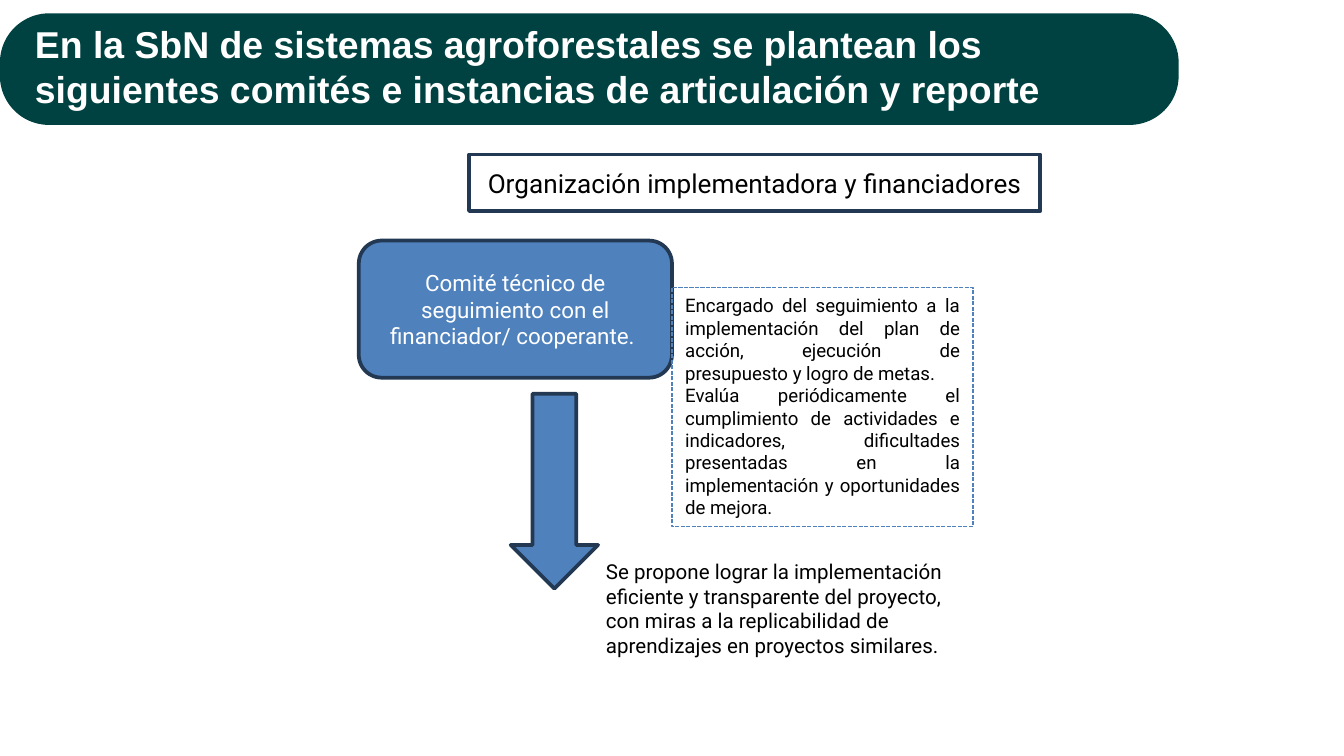
"""Build the slide on committees and reporting for agroforestry systems."""
from dataclasses import dataclass
from typing import Optional

from pptx import Presentation
from pptx.dml.color import RGBColor
from pptx.enum.dml import MSO_LINE
from pptx.enum.shapes import MSO_SHAPE
from pptx.enum.text import MSO_ANCHOR, MSO_AUTO_SIZE, PP_ALIGN
from pptx.shapes.autoshape import Shape
from pptx.slide import Slide
from pptx.util import Inches, Pt

BLUE = "4F81BD"
NAVY = "233953"
GREEN = "004241"
WHITE = "FFFFFF"
BLACK = "000000"


@dataclass
class Block:
    geometry: MSO_SHAPE
    box: tuple[float, float, float, float]
    paragraphs: tuple[str, ...] = ()
    size: float = 12
    color: str = BLACK
    align: PP_ALIGN = PP_ALIGN.CENTER
    anchor: MSO_ANCHOR = MSO_ANCHOR.MIDDLE
    fill: Optional[str] = None
    line: Optional[str] = NAVY
    weight: float = 2
    dash: Optional[MSO_LINE] = None


TITLE = (
    "En la SbN de sistemas agroforestales se plantean los siguientes "
    "comités e instancias de articulación y reporte"
)
BLOCKS = (
    Block(
        MSO_SHAPE.ROUNDED_RECTANGLE, (2.67, 1.79, 2.33, 1.02),
        ("Comité técnico de seguimiento con el financiador/ cooperante. ",),
        color=WHITE, fill=BLUE,
    ),
    Block(
        MSO_SHAPE.RECTANGLE, (3.49, 1.15, 4.25, 0.42),
        ("Organización implementadora y financiadores",), size=14,
    ),
    Block(
        MSO_SHAPE.RECTANGLE, (5, 2.14, 2.24, 1.78),
        (
            "Encargado del seguimiento a la implementación del plan de acción, "
            "ejecución de presupuesto y logro de metas. ",
            "Evalúa periódicamente el cumplimiento de actividades e indicadores, "
            "dificultades presentadas en la implementación y oportunidades de mejora. ",
        ),
        size=10, align=PP_ALIGN.JUSTIFY, anchor=MSO_ANCHOR.TOP,
        line=BLUE, weight=0.75, dash=MSO_LINE.SQUARE_DOT,
    ),
    Block(MSO_SHAPE.DOWN_ARROW, (3.8, 2.93, 0.65, 1.45), fill=BLUE),
    Block(
        MSO_SHAPE.RECTANGLE, (4.41, 4.11, 2.72, 0.84),
        (
            "Se propone lograr la implementación eficiente y transparente del "
            "proyecto, con miras a la replicabilidad de aprendizajes en proyectos "
            "similares.",
        ),
        size=11, align=PP_ALIGN.LEFT, anchor=MSO_ANCHOR.TOP, line=None,
    ),
)


def rgb(color: str) -> RGBColor:
    """Turn a hex string into a colour."""
    return RGBColor.from_string(color)


def add_block(slide: Slide, block: Block) -> Shape:
    """Draw one block with its fill, outline and text."""
    shape = slide.shapes.add_shape(block.geometry, *map(Inches, block.box))
    shape.shadow.inherit = False
    if block.fill:
        shape.fill.solid()
        shape.fill.fore_color.rgb = rgb(block.fill)
    else:
        shape.fill.background()
    if block.line:
        shape.line.color.rgb = rgb(block.line)
        shape.line.width = Pt(block.weight)
        if block.dash:
            shape.line.dash_style = block.dash
    else:
        shape.line.fill.background()
    if block.paragraphs:
        frame = shape.text_frame
        frame.word_wrap = True
        frame.vertical_anchor = block.anchor
        frame.text = "\n".join(block.paragraphs)
        for paragraph in frame.paragraphs:
            paragraph.alignment = block.align
            paragraph.font.name = "Roboto"
            paragraph.font.size = Pt(block.size)
            paragraph.font.color.rgb = rgb(block.color)
    return shape


def add_title(slide: Slide) -> None:
    """Place the title on its rounded band."""
    title = slide.shapes.title
    title.left, title.top, title.width, title.height = map(
        Inches, (0.25, 0.15, 8.41, 0.69)
    )
    band = add_block(
        slide,
        Block(MSO_SHAPE.ROUNDED_RECTANGLE, (0, 0.1, 8.77, 0.83), fill=GREEN, line=None),
    )
    band.adjustments[0] = 0.44
    title.element.addprevious(band.element)

    frame = title.text_frame
    frame.text = TITLE
    frame.word_wrap = True
    frame.auto_size = MSO_AUTO_SIZE.NONE
    frame.vertical_anchor = MSO_ANCHOR.TOP
    frame.margin_right = frame.margin_bottom = 0
    frame.margin_left = frame.margin_top = Inches(0.01)
    heading = frame.paragraphs[0]
    heading.alignment = PP_ALIGN.LEFT
    heading.space_before = Pt(1)
    heading.line_spacing = 1.0
    heading.font.name = "Arial"
    heading.font.size = Pt(20)
    heading.font.bold = True
    heading.font.color.rgb = rgb(WHITE)


def main() -> None:
    """Assemble and save the presentation."""
    presentation = Presentation()
    presentation.slide_width = Inches(10)
    presentation.slide_height = Inches(10 * 9 / 16)
    slide = presentation.slides.add_slide(presentation.slide_layouts[5])
    add_title(slide)
    for block in BLOCKS:
        add_block(slide, block)
    presentation.save("out.pptx")


if __name__ == "__main__":
    main()
